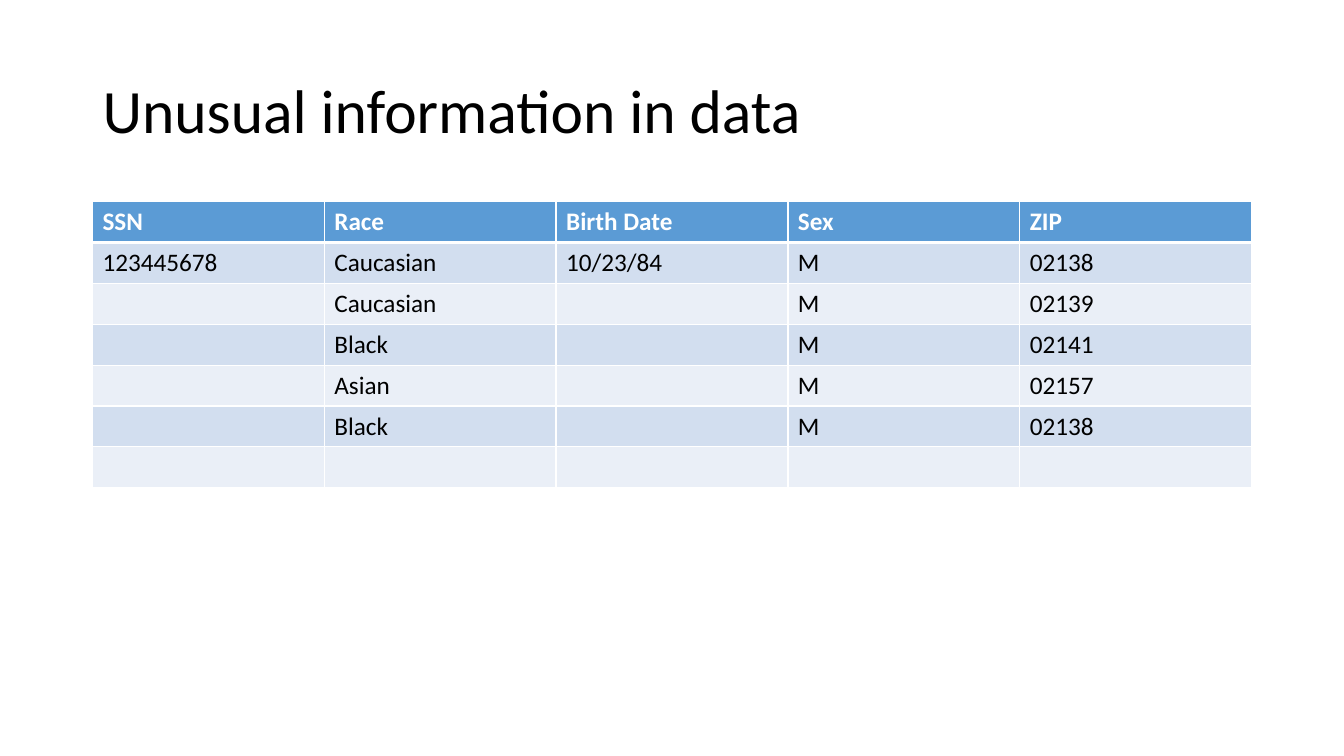
from lxml.etree import SubElement
from pptx import Presentation
from pptx.dml.color import RGBColor
from pptx.enum.text import MSO_ANCHOR, MSO_AUTO_SIZE, PP_ALIGN
from pptx.oxml.ns import qn
from pptx.util import Cm, Pt

COLORS = {
    "text": "000000",
    "white": "FFFFFF",
    "header": "5B9BD5",
    "odd_row": "D2DEEF",
    "even_row": "EAEFF7",
}
FONT = "Calibri"
RECORDS = [
    ("SSN", "Race", "Birth Date", "Sex", "ZIP"),
    ("123445678", "Caucasian", "10/23/84", "M", "02138"),
    ("", "Caucasian", "", "M", "02139"),
    ("", "Black", "", "M", "02141"),
    ("", "Asian", "", "M", "02157"),
    ("", "Black", "", "M", "02138"),
    ("", "", "", "", ""),
]


def format_paragraph(paragraph, size, color, bold=False):
    paragraph.alignment = PP_ALIGN.LEFT
    font = paragraph.font
    font.name = FONT
    font.size = Pt(size)
    font.bold = bold
    font.color.rgb = RGBColor.from_string(COLORS[color])


def add_title(slide, left, top, width, height):
    title = slide.shapes.title
    title.left, title.top, title.width, title.height = left, top, width, height
    frame = title.text_frame
    frame.text = "Unusual information in data"
    frame.word_wrap = True
    frame.auto_size = MSO_AUTO_SIZE.NONE
    frame.vertical_anchor = MSO_ANCHOR.MIDDLE
    paragraph = frame.paragraphs[0]
    paragraph.line_spacing = 0.9
    format_paragraph(paragraph, 44, "text")


def set_borders(cell, widths):
    properties = cell._tc.get_or_add_tcPr()
    for side, width in widths.items():
        line = SubElement(properties, qn(f"a:ln{side}"), w=str(Pt(width)))
        fill = SubElement(line, qn("a:solidFill"))
        SubElement(fill, qn("a:srgbClr"), val=COLORS["white"])


def format_cell(cell, text, row_index):
    is_header = row_index == 0
    set_borders(cell, {
        "L": 1,
        "R": 1,
        "T": 3 if row_index == 1 else 1,
        "B": 3 if is_header else 1,
    })
    band = "header" if is_header else "odd_row" if row_index % 2 else "even_row"
    cell.fill.solid()
    cell.fill.fore_color.rgb = RGBColor.from_string(COLORS[band])
    cell.text = text
    format_paragraph(cell.text_frame.paragraphs[0], 18,
                     "white" if is_header else "text", is_header)


def add_records_table(slide, left, top, width, height):
    row_count, column_count = len(RECORDS), len(RECORDS[0])
    table = slide.shapes.add_table(
        row_count, column_count, left, top, width, height).table
    for row_index, record in enumerate(RECORDS):
        for column_index, text in enumerate(record):
            format_cell(table.cell(row_index, column_index), text, row_index)


def main():
    presentation = Presentation()
    presentation.slide_width = Cm(33.87)
    presentation.slide_height = Cm(19.05)
    slide = presentation.slides.add_slide(presentation.slide_layouts[5])
    left, width = Cm(2.33), Cm(29.21)
    add_title(slide, left, Cm(1.01), width, Cm(3.68))
    add_records_table(slide, left, Cm(5.08), width, Cm(7.21))
    presentation.save("out.pptx")


if __name__ == "__main__":
    main()
